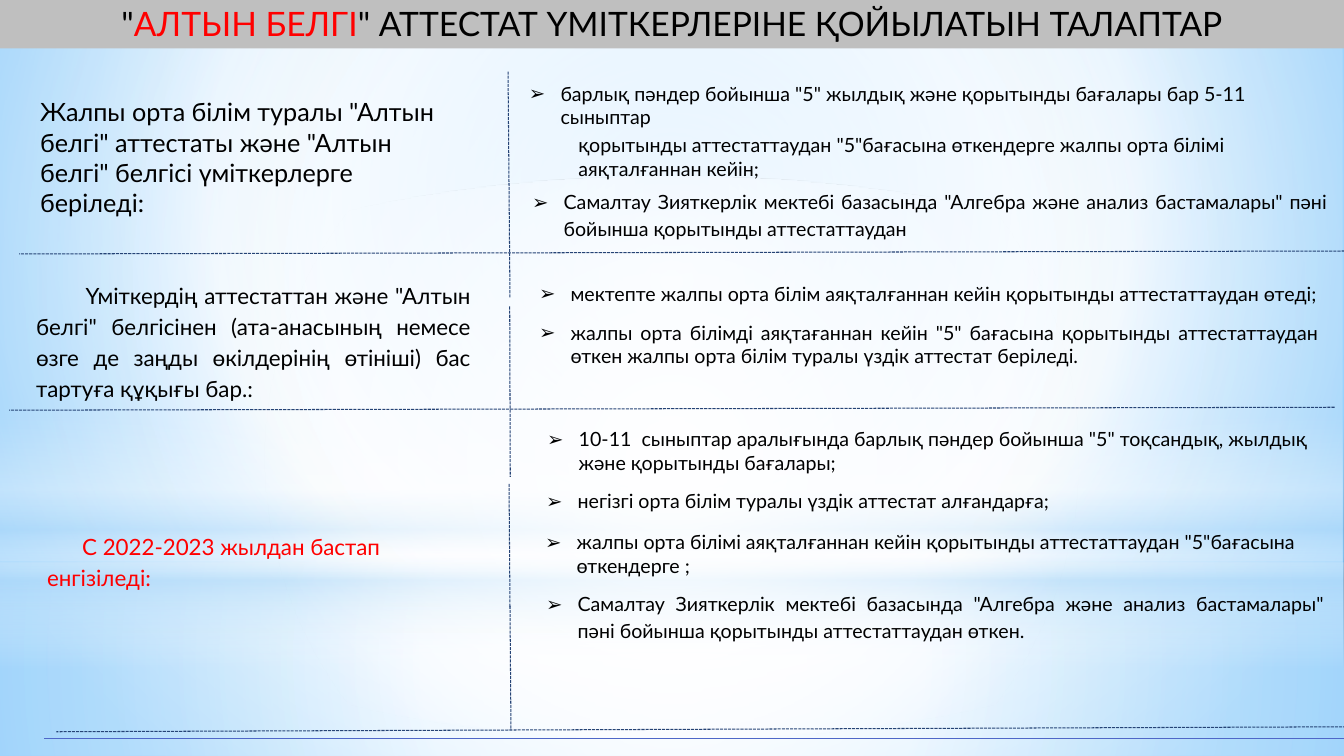
"""Build the slide on the requirements for Altyn Belgi certificate candidates."""
from dataclasses import dataclass

from pptx import Presentation
from pptx import oxml
from pptx import util as u
from pptx.dml.color import RGBColor
from pptx.enum import dml, shapes, text
from pptx.oxml import ns

BLACK = RGBColor(0x00, 0x00, 0x00)
RED = RGBColor(0xFF, 0x00, 0x00)
GREY = RGBColor(0xBF, 0xBF, 0xBF)
NAVY = RGBColor(0x25, 0x43, 0x75)
INDIGO = RGBColor(0x4E, 0x67, 0xC8)
WHITE = RGBColor(0xFF, 0xFF, 0xFF)
SKY = RGBColor(0xB4, 0xDC, 0xFA)
PALE_BLUE = RGBColor(0x9E, 0xD5, 0xFF)
BRIGHT_BLUE = RGBColor(0x5B, 0xB9, 0xFF)

FONT = "Lato"
WIDTH, HEIGHT = 960, 540
HANG = 22.5
LEFT, JUSTIFY = text.PP_ALIGN.LEFT, text.PP_ALIGN.JUSTIFY
RECT, OVAL = shapes.MSO_SHAPE.RECTANGLE, shapes.MSO_SHAPE.OVAL


@dataclass(frozen=True)
class Gradient:
    stops: tuple[tuple[int, RGBColor, int], ...]
    focus: tuple[int, int, int, int] | None = (50, 50, 50, 50)


@dataclass(frozen=True)
class Glow:
    top: float
    height: float
    gradient: Gradient
    outline: shapes.MSO_SHAPE = RECT


@dataclass(frozen=True)
class Divider:
    start: tuple[float, float]
    end: tuple[float, float]
    color: RGBColor = NAVY
    dashed: bool = True


@dataclass(frozen=True)
class Statement:
    box: tuple[float, float, float, float]
    wording: str
    size: float = 14
    align: text.PP_ALIGN = LEFT
    spacing: float = 1.0
    bullet: bool = True
    indent: float = 0
    color: RGBColor = BLACK


BACKDROP = Gradient(((0, PALE_BLUE, 100), (60, WHITE, 100), (100, BRIGHT_BLUE, 100)),
                    (20, 10, 20, 60))
GLOWS = (
    Glow(402, 138, Gradient(((0, WHITE, 91), (37, WHITE, 76), (100, SKY, 79)))),
    Glow(0, 402, Gradient(((0, WHITE, 89), (48, WHITE, 62), (100, SKY, 79)))),
    Glow(296.6, 180, Gradient(((0, WHITE, 0), (29, WHITE, 30), (45, SKY, 40), (55, WHITE, 26),
                               (65, SKY, 60), (100, WHITE, 0)), None)),
    Glow(126, 402, Gradient(((0, WHITE, 100), (56, WHITE, 0))), OVAL),
)
DIVIDERS = (
    Divider((960.5, 179.3), (13.7, 181.4)),
    Divider((953.3, 290.9), (6.5, 293)),
    Divider((976.3, 519.1), (40.3, 522.7)),
    Divider((362.9, 51.1), (364.3, 213.1)),
    Divider((364.1, 218.9), (364.5, 340.6)),
    Divider((363.6, 345.6), (364.3, 433.4)),
    Divider((364.3, 432.7), (365, 521.3)),
    Divider((31.7, 527.3), (960.5, 527.3), INDIGO, False),
)
STATEMENTS = (
    Statement((21.6, 65.5, 314.6, 94.3),
              'Жалпы орта білім туралы "Алтын белгі" аттестаты және "Алтын белгі" белгісі '
              'үміткерлерге беріледі:', size=18, bullet=False),
    Statement((370.8, 54.7, 587.5, 41),
              'барлық пәндер бойынша "5" жылдық және қорытынды бағалары бар 5-11 сыныптар'),
    Statement((406.1, 91.4, 527.8, 41),
              'қорытынды аттестаттаудан "5"бағасына өткендерге жалпы орта білімі '
              'аяқталғаннан кейін;', bullet=False),
    Statement((373, 129.6, 582.5, 46),
              'Самалтау Зияткерлік мектебі базасында "Алгебра және анализ бастамалары" пәні '
              'бойынша қорытынды аттестаттаудан', align=JUSTIFY, spacing=1.15),
    Statement((18.7, 195.1, 324.7, 96.5),
              'Үміткердің аттестаттан және "Алтын белгі" белгісінен (ата-анасының немесе өзге де '
              'заңды өкілдерінің өтініші) бас тартуға құқығы бар.:',
              size=16, align=JUSTIFY, spacing=1.15, bullet=False, indent=35.3),
    Statement((378, 195.1, 571, 26.6),
              'мектепте жалпы орта білім аяқталғаннан кейін қорытынды аттестаттаудан өтеді;',
              align=JUSTIFY, spacing=1.15),
    Statement((378, 225.4, 571, 41),
              'жалпы орта білімді аяқтағаннан кейін "5" бағасына қорытынды аттестаттаудан өткен '
              'жалпы орта білім туралы үздік аттестат беріледі.', align=JUSTIFY),
    Statement((26.6, 374.4, 324.7, 51.8), 'C 2022-2023 жылдан бастап енгізіледі:',
              size=16, spacing=1.15, bullet=False, indent=25, color=RED),
    Statement((383.8, 301.7, 566.6, 41),
              '10-11  сыныптар аралығында барлық пәндер бойынша "5" тоқсандық, жылдық және '
              'қорытынды бағалары;'),
    Statement((383, 345.6, 565.2, 24.5), 'негізгі орта білім туралы үздік аттестат алғандарға;'),
    Statement((382.3, 375.1, 589, 41),
              'жалпы орта білімі аяқталғаннан кейін қорытынды аттестаттаудан "5"бағасына '
              'өткендерге ;'),
    Statement((383, 416.9, 570.2, 46),
              'Самалтау Зияткерлік мектебі базасында "Алгебра және анализ бастамалары" пәні '
              'бойынша қорытынды аттестаттаудан өткен.', align=JUSTIFY, spacing=1.15),
)
TITLE = (('"', BLACK), ('АЛТЫН БЕЛГІ', RED),
         ('" АТТЕСТАТ ҮМІТКЕРЛЕРІНЕ ҚОЙЫЛАТЫН ТАЛАПТАР', BLACK))


def points(*lengths: float) -> list[u.Length]:
    return [u.Pt(length) for length in lengths]


def apply(target, formats: dict) -> None:
    for attribute, value in formats.items():
        setattr(target, attribute, value)


def fill_gradient(fill, owner, gradient: Gradient) -> None:
    fill.gradient()
    blank = next(owner.iter(ns.qn("a:gradFill")))
    stops = "".join(
        f'<a:gs pos="{place * 1000}"><a:srgbClr val="{color}">'
        f'<a:alpha val="{opacity * 1000}"/></a:srgbClr></a:gs>'
        for place, color, opacity in gradient.stops)
    if gradient.focus:
        sides = " ".join(f'{side}="{share * 1000}"' for side, share in zip("ltrb", gradient.focus))
        direction = f'<a:path path="circle"><a:fillToRect {sides}/></a:path>'
    else:
        direction = '<a:lin ang="5400000" scaled="0"/>'
    blank.getparent().replace(blank, oxml.parse_xml(
        f'<a:gradFill {ns.nsdecls("a")} rotWithShape="1"><a:gsLst>{stops}</a:gsLst>'
        f'{direction}</a:gradFill>'))


def add_panel(slide, outline: shapes.MSO_SHAPE, top: float, height: float):
    panel = slide.shapes.add_shape(outline, *points(0, top, WIDTH, height))
    panel.shadow.inherit = False
    panel.line.fill.background()
    return panel


def add_run(paragraph, wording: str, size: float, color: RGBColor) -> None:
    run = paragraph.add_run()
    run.text = wording
    apply(run.font, {"name": FONT, "size": u.Pt(size)})
    run.font.color.rgb = color


def add_title(slide) -> None:
    banner = add_panel(slide, RECT, -1.4, 36)
    banner.fill.solid()
    banner.fill.fore_color.rgb = GREY
    apply(banner.text_frame, {"word_wrap": True, "vertical_anchor": text.MSO_ANCHOR.MIDDLE})
    heading = banner.text_frame.paragraphs[0]
    heading.alignment = text.PP_ALIGN.CENTER
    for wording, color in TITLE:
        add_run(heading, wording, 24, color)


def add_divider(slide, divider: Divider) -> None:
    rule = slide.shapes.add_connector(shapes.MSO_CONNECTOR.STRAIGHT,
                                      *points(*divider.start, *divider.end))
    rule.line.color.rgb = divider.color
    rule.line.width = u.Pt(0.75)
    if divider.dashed:
        rule.line.dash_style = dml.MSO_LINE.SQUARE_DOT
    rule.element.spPr.append(oxml.parse_xml(f'<a:effectLst {ns.nsdecls("a")}/>'))


def add_statement(slide, statement: Statement) -> None:
    frame = slide.shapes.add_textbox(*points(*statement.box)).text_frame
    frame.word_wrap = True
    paragraph = frame.paragraphs[0]
    apply(paragraph, {"alignment": statement.align, "line_spacing": statement.spacing})
    add_run(paragraph, statement.wording, statement.size, statement.color)
    margin, indent = (HANG, -HANG) if statement.bullet else (0, statement.indent)
    properties = paragraph._p.get_or_add_pPr()
    properties.set("marL", str(u.Pt(margin)))
    properties.set("indent", str(u.Pt(indent)))
    marks = (f'<a:buFont {{}} typeface="{FONT}"/>', '<a:buChar {} char="➢"/>')
    for mark in marks if statement.bullet else ('<a:buNone {}/>',):
        properties.append(oxml.parse_xml(mark.format(ns.nsdecls("a"))))


def main() -> None:
    deck = Presentation()
    apply(deck, {"slide_width": u.Pt(WIDTH), "slide_height": u.Pt(HEIGHT)})
    slide = deck.slides.add_slide(deck.slide_layouts[6])
    fill_gradient(slide.background.fill, slide.element, BACKDROP)
    for glow in GLOWS:
        panel = add_panel(slide, glow.outline, glow.top, glow.height)
        fill_gradient(panel.fill, panel.element, glow.gradient)
    add_title(slide)
    for divider in DIVIDERS:
        add_divider(slide, divider)
    for statement in STATEMENTS:
        add_statement(slide, statement)
    deck.save("out.pptx")


if __name__ == "__main__":
    main()
